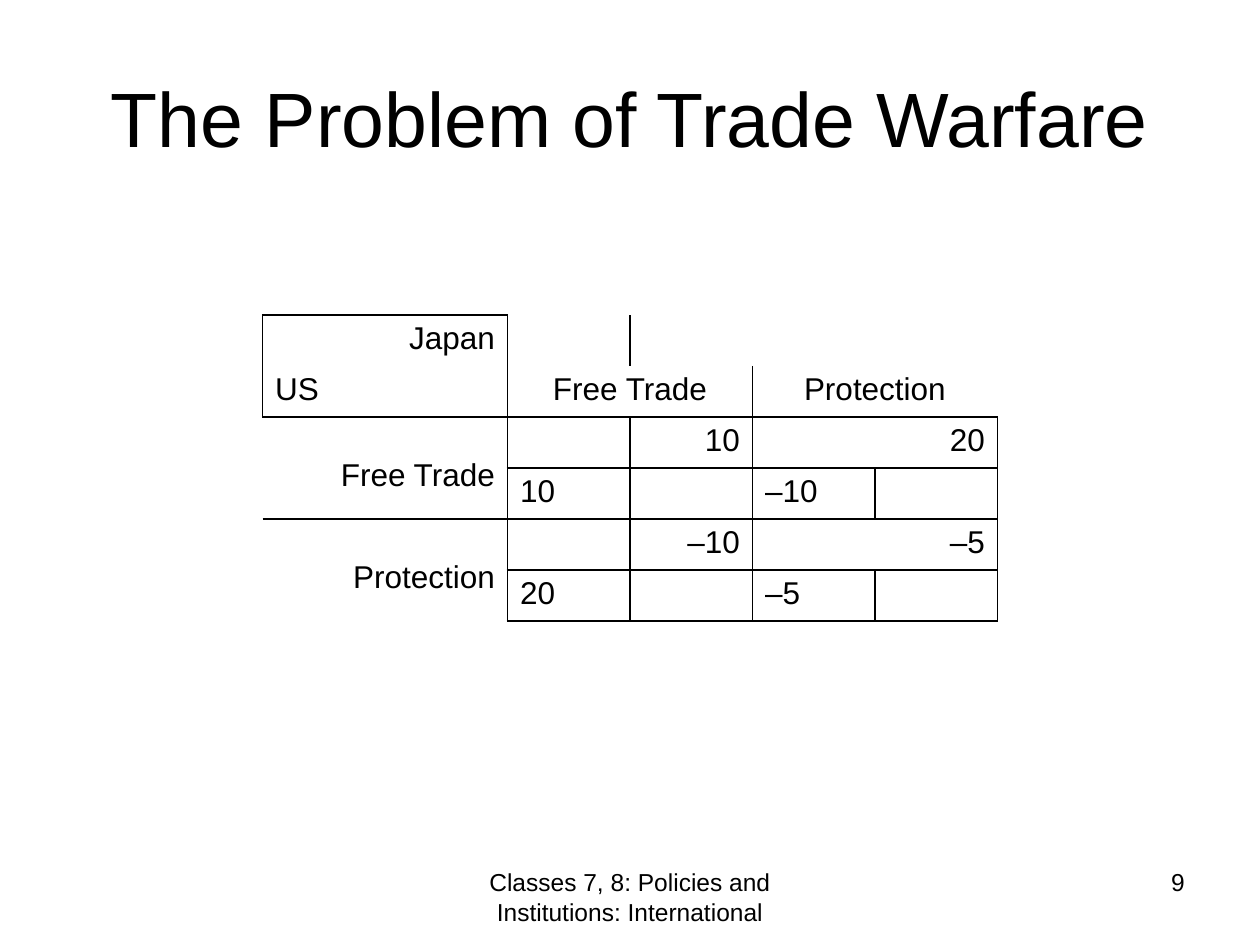
from lxml import etree
from pptx import Presentation
from pptx.dml.color import RGBColor
from pptx.enum import text as t
from pptx.oxml import ns
from pptx.util import Pt

BLACK, WHITE = "000000", "FFFFFF"
LEFT, MID, RIGHT = t.PP_ALIGN.LEFT, t.PP_ALIGN.CENTER, t.PP_ALIGN.RIGHT
NO_GRID = "{2D5ABB26-0587-4C30-8999-92F81FD0307C}"
SIDES = {"L": (0, -1), "R": (0, 1), "T": (-1, 0), "B": (1, 0)}

# Blocks of two by two cells that carry a frame: (block row, block column)
FRAMED = {(0, 0), (1, 1), (1, 2), (2, 1), (2, 2)}
# Block: (upper right, lower left)
PAIRS = {
    (0, 0): ("Japan", "US"),
    (1, 1): ("10", "10"),
    (1, 2): ("20", "–10"),
    (2, 1): ("–10", "20"),
    (2, 2): ("–5", "–5"),
}
MOVES = ("Free Trade", "Protection")


def color(code):
    return RGBColor.from_string(code)


def write(frame, words, size, align):
    para = frame.paragraphs[0]
    para.alignment = align
    run = para.add_run()
    run.text = words
    run.font.name = "Arial"
    run.font.size = Pt(size)
    run.font.color.rgb = color(BLACK)


def add_text(slide, box, words, size, align, anchor=t.MSO_ANCHOR.TOP):
    frame = slide.shapes.add_textbox(*map(Pt, box)).text_frame
    frame.word_wrap = True
    frame.vertical_anchor = anchor
    write(frame, words, size, align)


def add_edge(cell, side):
    props = cell._tc.get_or_add_tcPr()
    line = etree.Element(ns.qn(f"a:ln{side}"), w=str(Pt(1)))
    fill = etree.SubElement(line, ns.qn("a:solidFill"))
    etree.SubElement(fill, ns.qn("a:srgbClr"), val=BLACK)
    # Lines come before the fill, in the order of SIDES
    props.insert(len(props) - 1, line)


def style_cell(cell, row, col):
    """Fill the cell and draw each side that borders a framed block."""
    cell.fill.solid()
    cell.fill.fore_color.rgb = color(WHITE)
    own = (row // 2, col // 2)
    for side, (down, over) in SIDES.items():
        near = ((row + down) // 2, (col + over) // 2)
        if near != own and FRAMED & {own, near}:
            add_edge(cell, side)


def add_payoffs(slide, box):
    count = 6
    shape = slide.shapes.add_table(count, count, *map(Pt, box))
    table = shape.table
    table.first_row = table.horz_banding = False
    shape._element.graphic.graphicData.tbl.tblPr[0].text = NO_GRID
    for k in range(count):
        table.columns[k].width = Pt(box[2] / count)
        table.rows[k].height = Pt(box[3] / count)
    for row in range(count):
        for col in range(count):
            style_cell(table.cell(row, col), row, col)

    for (down, over), (upper, lower) in PAIRS.items():
        row, col = 2 * down, 2 * over
        write(table.cell(row, col + 1).text_frame, upper, 18, RIGHT)
        write(table.cell(row + 1, col).text_frame, lower, 18, LEFT)

    for k, move in enumerate(MOVES, 1):
        head = table.cell(1, 2 * k)
        head.merge(table.cell(1, 2 * k + 1))
        write(head.text_frame, move, 18, MID)
        label = table.cell(2 * k, 0)
        label.merge(table.cell(2 * k + 1, 1))
        label.vertical_anchor = t.MSO_ANCHOR.MIDDLE
        label.margin_top = Pt(12.6)
        write(label.text_frame, move, 18, RIGHT)


def main():
    deck = Presentation()
    deck.slide_width, deck.slide_height = Pt(720), Pt(540)
    slide = deck.slides.add_slide(deck.slide_layouts[6])
    add_text(slide, (36, 21.6, 648, 90), "The Problem of Trade Warfare",
             44, MID, t.MSO_ANCHOR.MIDDLE)
    add_payoffs(slide, (150, 180, 420, 175))
    add_text(slide, (246, 492, 228, 37.5),
             "Classes 7, 8: Policies and Institutions: International", 14, MID)
    add_text(slide, (516, 492, 168, 37.5), "9", 14, RIGHT)
    deck.save("out.pptx")


if __name__ == "__main__":
    main()
